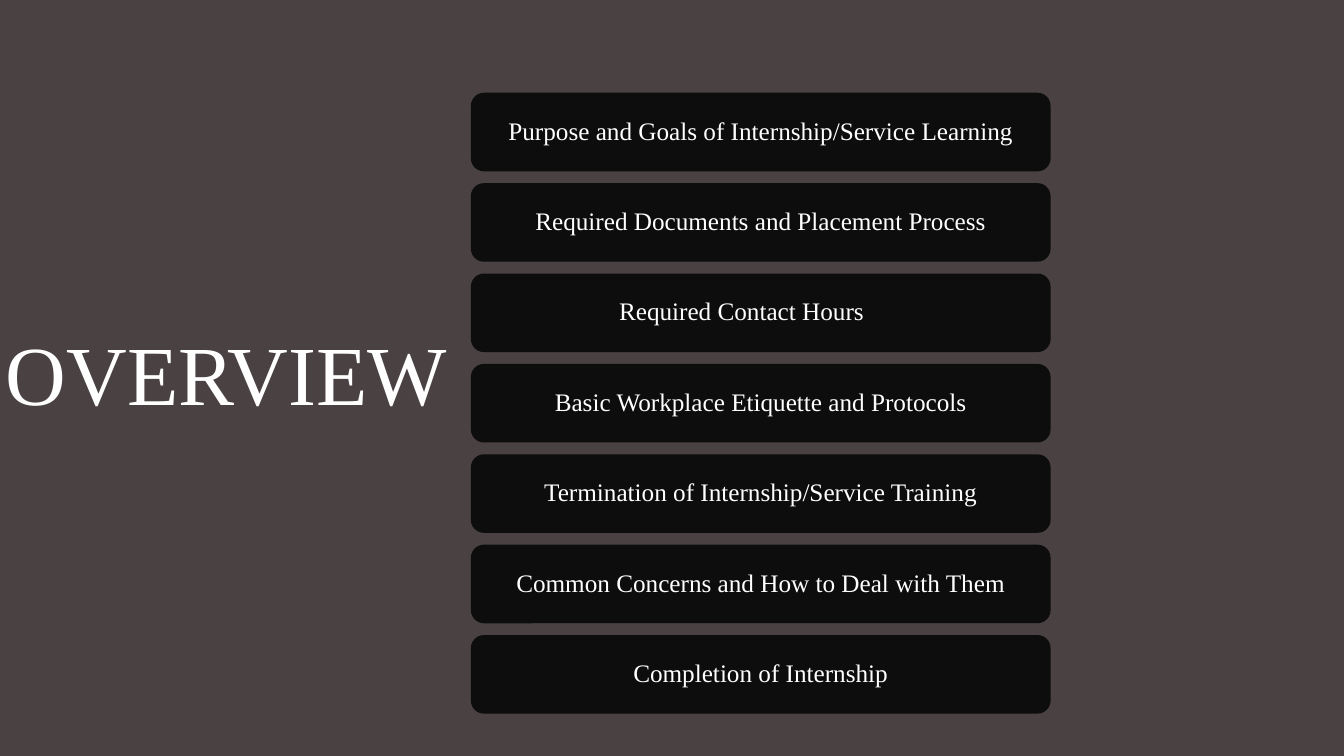
from pptx import Presentation
from pptx.dml.color import RGBColor
from pptx.enum.shapes import MSO_SHAPE
from pptx.enum.text import MSO_ANCHOR, PP_ALIGN
from pptx.util import Inches, Pt

# Content
TITLE = "OVERVIEW"
# Topic and extra right inset, which moves the centred text to the left
TOPICS = [
    ("Purpose and Goals of Internship/Service Learning", 0),
    ("Required Documents and Placement Process", 0),
    ("Required Contact Hours", 0.38),
    ("Basic Workplace Etiquette and Protocols", 0),
    ("Termination of Internship/Service Training", 0),
    ("Common Concerns and How to Deal with Them", 0),
    ("Completion of Internship", 0),
]

# Style
FONT = "Times New Roman"
BACKGROUND = RGBColor(0x49, 0x41, 0x42)
BAR = RGBColor(0x0D, 0x0D, 0x0D)
WHITE = RGBColor(0xFF, 0xFF, 0xFF)

# Layout in inches
BAR_LEFT, BAR_WIDTH, BAR_HEIGHT = 4.67, 5.75, 0.78
FIRST_TOP, LAST_TOP = 0.92, 6.3
STEP = (LAST_TOP - FIRST_TOP) / (len(TOPICS) - 1)
INSET = 0.11


def set_text(tf, text, size):
    tf.word_wrap = True
    tf.vertical_anchor = MSO_ANCHOR.MIDDLE
    p = tf.paragraphs[0]
    p.text = text
    p.alignment = PP_ALIGN.CENTER
    p.line_spacing = 0.9
    p.font.name = FONT
    p.font.size = Pt(size)
    p.font.color.rgb = WHITE


def add_bar(s, top, text, extra_right):
    sp = s.shapes.add_shape(MSO_SHAPE.ROUNDED_RECTANGLE, Inches(BAR_LEFT),
                            Inches(top), Inches(BAR_WIDTH), Inches(BAR_HEIGHT))
    sp.shadow.inherit = False
    sp.fill.solid()
    sp.fill.fore_color.rgb = BAR
    sp.line.fill.background()
    tf = sp.text_frame
    tf.margin_left = tf.margin_top = tf.margin_bottom = Inches(INSET)
    tf.margin_right = Inches(INSET + extra_right)
    set_text(tf, text, 18)


def main():
    prs = Presentation()
    prs.slide_width, prs.slide_height = Inches(13.33), Inches(7.5)
    s = prs.slides.add_slide(prs.slide_layouts[6])
    s.background.fill.solid()
    s.background.fill.fore_color.rgb = BACKGROUND

    # Title
    title = s.shapes.add_textbox(Inches(-0.12), Inches(2.69),
                                 Inches(4.73), Inches(2.12))
    set_text(title.text_frame, TITLE, 60)

    # Topic bars
    for i, (topic, extra_right) in enumerate(TOPICS):
        add_bar(s, FIRST_TOP + i * STEP, topic, extra_right)

    prs.save("out.pptx")


if __name__ == "__main__":
    main()
